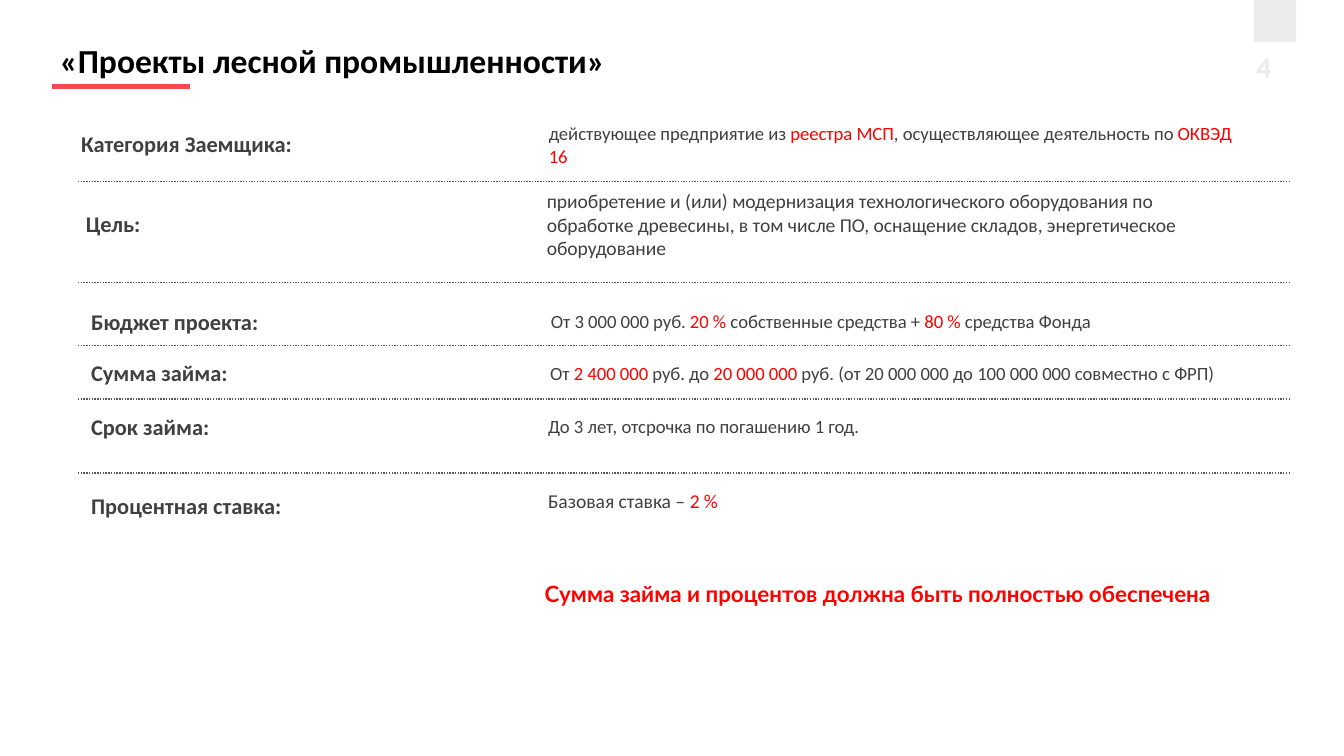
from dataclasses import dataclass

from lxml import etree
from pptx import Presentation
from pptx import util as u
from pptx.dml.color import RGBColor
from pptx.enum import dml, shapes, text
from pptx.oxml import ns

PX = 4572


@dataclass(frozen=True)
class Theme:
    """Colours, fonts and type sizes."""
    ink: str = "404040"
    black: str = "000000"
    red: str = "FF0000"
    accent: str = "F4494E"
    rule: str = "595959"
    pale: str = "EBEBEB"
    body: str = "Calibri"
    alt: str = "Lato"
    title: float = 18
    page: float = 16
    label: float = 12
    value: float = 10
    large: float = 10.5


T = Theme()

ROWS = [
    (172, 98, (101, 12, 426), (797, 0, 1060), T.value, "Категория Заемщика:",
     "действующее предприятие из |реестра МСП|, осуществляющее деятельность по |ОКВЭД 16"),
    (270, 150, (108, 33, 362), (794, 2, 1024), T.large, "Цель:",
     "приобретение и (или) модернизация технологического оборудования по обработке "
     "древесины, в том числе ПО, оснащение складов, энергетическое оборудование"),
    (420, 94, (116, 28, 348), (800, 31, 1098), T.value, "Бюджет проекта:",
     "От 3 000 000 руб. |20 %| собственные средства + |80 %| средства Фонда"),
    (514, 80, (116, 11, 280), (799, 15, 1160), T.value, "Сумма займа:",
     "От |2 400 000 |руб. до |20 000 000 |руб. (от 20 000 000 до 100 000 000 совместно с ФРП)"),
    (594, 110, (116, 11, 252), (796, 14, 570), T.value, "Срок займа:",
     "До 3 лет, отсрочка по погашению 1 год."),
    (704, 90, (116, 18, 390), (796, 14, 1000), T.large, "Процентная ставка:",
     "Базовая ставка – |2 %"),
]


def write(slide, words, box, size=T.label, color=T.ink, bold=False, font=T.body):
    """Place text in a box; every second part between bars is red."""
    frame = slide.shapes.add_textbox(*(n * PX for n in box)).text_frame
    frame.word_wrap = True
    frame.auto_size = text.MSO_AUTO_SIZE.NONE
    for i, part in enumerate(words.split("|")):
        run = frame.paragraphs[0].add_run()
        run.text = part
        run.font.size = u.Pt(size)
        run.font.name = font
        run.font.bold = bold
        run.font.color.rgb = RGBColor.from_string(T.red if i % 2 else color)


def rule(slide, left, top, width, color=T.rule, weight=0.75, dash=None):
    """Draw a level line without a shadow."""
    line = slide.shapes.add_connector(
        shapes.MSO_CONNECTOR.STRAIGHT, left * PX, top * PX, (left + width) * PX, top * PX)
    line.line.color.rgb = RGBColor.from_string(color)
    line.line.width = u.Pt(weight)
    if dash:
        line.line.dash_style = dash
    etree.SubElement(line._element.spPr, ns.qn("a:effectLst"))


def header(slide, left, top, width, height):
    """Place the title and its accent line."""
    write(slide, " «Проекты лесной промышленности»", (left, top, width, height),
          size=T.title, color=T.black, bold=True)
    rule(slide, left + 20, top + height - 1, 205, color=T.accent, weight=3)


def badge(slide, left, top, side):
    """Place the corner square and the page number below it."""
    square = slide.shapes.add_shape(
        shapes.MSO_SHAPE.RECTANGLE, *(n * PX for n in (left, top, side, side)))
    square.shadow.inherit = False
    square.fill.solid()
    square.fill.fore_color.rgb = RGBColor.from_string(T.pale)
    square.line.fill.background()
    write(slide, "4", (left - 16, top + side, 100, 74), size=T.page, color=T.pale, bold=True)


def row(slide, top, height, label, value, size, name, words, last=False):
    """Place a label, its value and the dotted line beneath."""
    x, y, width = label
    write(slide, name, (x, top + y, width, 60), bold=True)
    x, y, width = value
    write(slide, words, (x, top + y, width, height - y), size=size)
    if not last:
        rule(slide, 116, top + height, 1802, dash=dml.MSO_LINE.ROUND_DOT)


def note(slide, *box):
    """Place the closing condition."""
    write(slide, "Сумма займа и процентов должна быть полностью обеспечена", box,
          color=T.red, bold=True, font=T.alt)


def main():
    """Build and save the slide."""
    deck = Presentation()
    deck.slide_width, deck.slide_height = 2000 * PX, 1125 * PX
    slide = deck.slides.add_slide(deck.slide_layouts[6])
    header(slide, 58, 50, 1130, 80)
    badge(slide, 1866, 0, 63)
    for item in ROWS:
        row(slide, *item, last=item is ROWS[-1])
    note(slide, 791, 853, 1194, 60)
    deck.save("out.pptx")


if __name__ == "__main__":
    main()
